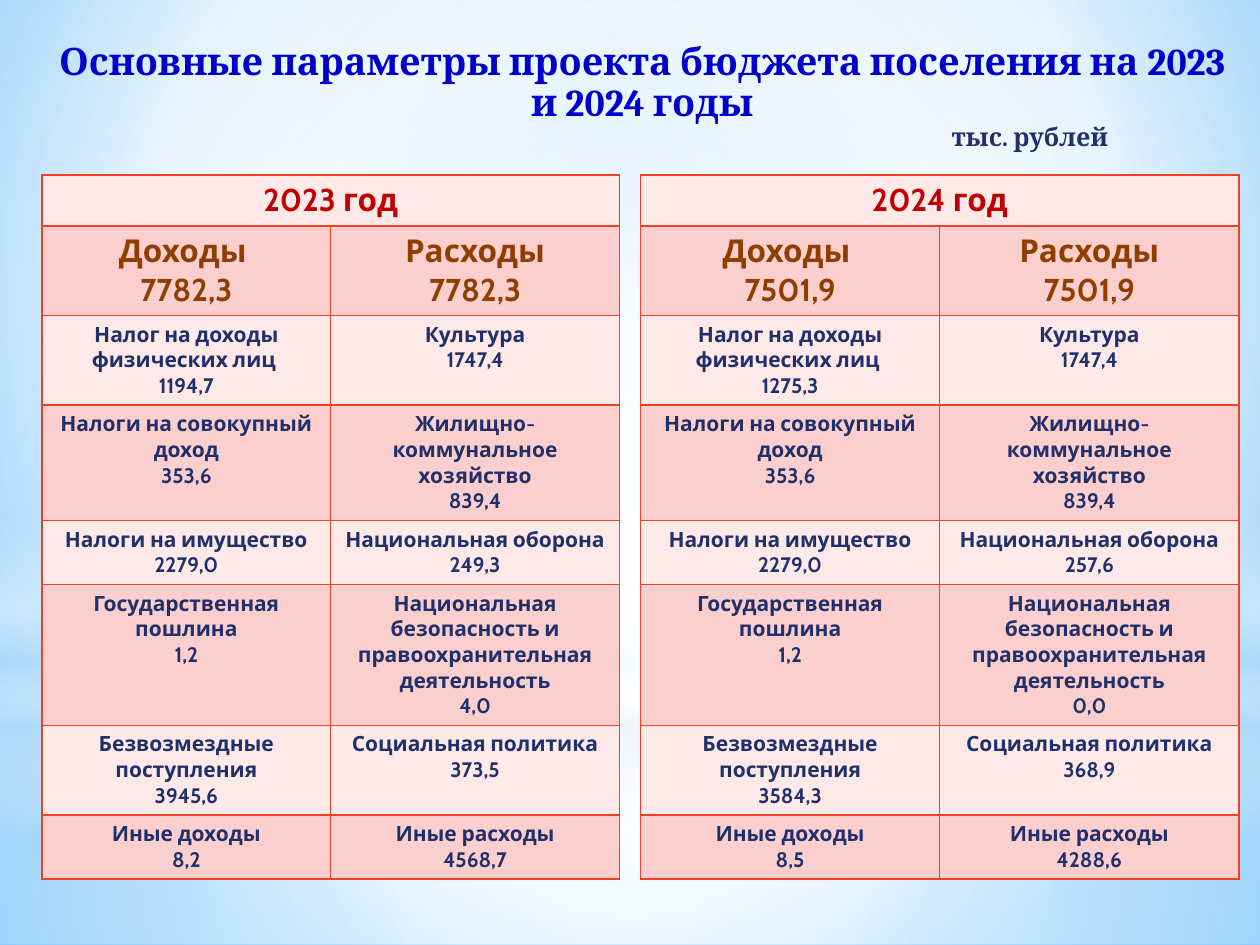
from lxml.etree import SubElement
from pptx import Presentation
from pptx.dml.color import RGBColor
from pptx.enum.shapes import MSO_SHAPE
from pptx.enum.text import MSO_ANCHOR, MSO_AUTO_SIZE, PP_ALIGN
from pptx.oxml import parse_xml
from pptx.oxml.ns import nsdecls, qn
from pptx.util import Pt

TITLE = "Основные параметры проекта бюджета поселения на 2023 и 2024 годы"
UNIT = "тыс. рублей"
INCOME = ["Доходы ", "Налог на доходы физических лиц ", "Налоги на совокупный доход",
          "Налоги на имущество", "Государственная пошлина",
          "Безвозмездные поступления", "Иные доходы"]
SPENDING = ["Расходы", "Культура", "Жилищно-коммунальное хозяйство",
            "Национальная оборона",
            "Национальная безопасность и правоохранительная деятельность",
            "Социальная политика", "Иные расходы"]
BUDGETS = [
    {"year": "2023 год", "left": 24, "width": 330,
     "income": ["7782,3", "1194,7", "353,6", "2279,0", "1,2", "3945,6", "8,2"],
     "spending": ["7782,3", "1747,4", "839,4", "249,3", "4,0", "373,5", "4568,7"]},
    {"year": "2024 год", "left": 366, "width": 342,
     "income": ["7501,9", "1275,3", "353,6", "2279,0", "1,2", "3584,3", "8,5"],
     "spending": ["7501,9", "1747,4", "839,4", "257,6", "0,0", "368,9", "4288,6"]},
]
TABLE_TOP = 100
ROW_HEIGHTS = [29, 51, 51, 65, 36, 80, 51, 36]
ROW_FILLS = ["FCE9E8", "FACFCD"]
BORDER = "F14124"

YEAR_FONT = {"name": "Cabin", "size": 18, "bold": True, "color": "C00000"}
TOTAL_FONT = {**YEAR_FONT, "color": "903E00"}
ITEM_FONT = {**YEAR_FONT, "size": 12, "color": "21306A"}
TITLE_FONT = {"name": "Cambria", "size": 21.6, "bold": True, "color": "0000CC"}
UNIT_FONT = {**TITLE_FONT, "size": 14.4, "color": "21306A"}

# Gradient stops: position, colour, opacity (all in percent)
PAGE_STOPS = [(0, "9ED5FF", 100), (60, "FFFFFF", 100), (100, "5BB9FF", 100)]
CENTRE = (50, 50, 50, 50)
BACKDROP = [
    (MSO_SHAPE.RECTANGLE, 402, 138, CENTRE,
     [(0, "FFFFFF", 91), (37, "FFFFFF", 76), (100, "B4DCFA", 79)]),
    (MSO_SHAPE.RECTANGLE, 0, 402, CENTRE,
     [(0, "FFFFFF", 89), (48, "FFFFFF", 62), (100, "B4DCFA", 79)]),
    (MSO_SHAPE.RECTANGLE, 297, 180, None,
     [(0, "FFFFFF", 0), (29, "FFFFFF", 30), (45, "B4DCFA", 40),
      (55, "FFFFFF", 26), (65, "B4DCFA", 60), (100, "FFFFFF", 0)]),
    (MSO_SHAPE.OVAL, 126, 402, CENTRE, [(0, "FFFFFF", 100), (56, "FFFFFF", 0)]),
]


def color(value):
    return RGBColor.from_string(value)


def set_gradient(properties, stops, focus):
    """Replace a solid fill by a circular gradient, or a vertical one without focus."""
    gradient = parse_xml(f'<a:gradFill {nsdecls("a")} rotWithShape="1"/>')
    stop_list = SubElement(gradient, qn("a:gsLst"))
    for position, value, opacity in stops:
        stop = SubElement(stop_list, qn("a:gs"), pos=str(position * 1000))
        tint = SubElement(stop, qn("a:srgbClr"), val=value)
        if opacity < 100:
            SubElement(tint, qn("a:alpha"), val=str(opacity * 1000))
    if focus:
        circle = SubElement(gradient, qn("a:path"), path="circle")
        sides = {side: str(part * 1000) for side, part in zip("ltrb", focus)}
        SubElement(circle, qn("a:fillToRect"), **sides)
    else:
        SubElement(gradient, qn("a:lin"), ang="5400000", scaled="0")
    properties.replace(properties.find(qn("a:solidFill")), gradient)


def write(para, text, style):
    para.alignment = PP_ALIGN.CENTER
    span = para.add_run()
    span.text = text
    for key, value in style.items():
        if key == "color":
            span.font.color.rgb = color(value)
        else:
            setattr(span.font, key, Pt(value) if key == "size" else value)


def fill_cell(cell, lines, style, fill):
    cell.fill.solid()
    cell.fill.fore_color.rgb = color(fill)
    properties = cell._tc.get_or_add_tcPr()
    for index, side in enumerate(("lnL", "lnR", "lnT", "lnB")):
        properties.insert(index, parse_xml(
            f'<a:{side} {nsdecls("a")} w="{Pt(1)}"><a:solidFill>'
            f'<a:srgbClr val="{BORDER}"/></a:solidFill></a:{side}>'))
    frame = cell.text_frame
    for index, line in enumerate(lines):
        write(frame.add_paragraph() if index else frame.paragraphs[0], line, style)


def add_backdrop(page, width):
    page.background.fill.solid()
    page.background.fill.fore_color.rgb = color("FFFFFF")
    set_gradient(page.element.find(".//" + qn("p:bgPr")), PAGE_STOPS, (20, 10, 20, 60))
    for kind, top, height, focus, stops in BACKDROP:
        shape = page.shapes.add_shape(kind, 0, Pt(top), width, Pt(height))
        shape.shadow.inherit = False
        shape.line.fill.background()
        shape.fill.solid()
        set_gradient(shape.element.spPr, stops, focus)


def add_title(page):
    title = page.shapes.title
    page.shapes.element.append(title.element)  # in front of the backdrop
    title.left, title.top, title.width, title.height = Pt(25), Pt(21), Pt(684), Pt(45)
    frame = title.text_frame
    frame.word_wrap = True
    frame.auto_size = MSO_AUTO_SIZE.NONE
    frame.vertical_anchor = MSO_ANCHOR.TOP
    write(frame.paragraphs[0], TITLE, TITLE_FONT)
    write(frame.add_paragraph(), UNIT, UNIT_FONT)
    for para in frame.paragraphs:
        para.line_spacing = 0.9
        para.space_before = Pt(0)
    frame.paragraphs[1]._p.get_or_add_pPr().set("marL", str(Pt(443)))


def add_budget(page, budget):
    table = page.shapes.add_table(
        len(ROW_HEIGHTS), 2, Pt(budget["left"]), Pt(TABLE_TOP),
        Pt(budget["width"]), Pt(sum(ROW_HEIGHTS))).table
    table.first_row = table.horz_banding = False
    for row, height in zip(table.rows, ROW_HEIGHTS):
        row.height = Pt(height)
    table.cell(0, 0).merge(table.cell(0, 1))
    fill_cell(table.cell(0, 0), [budget["year"]], YEAR_FONT, ROW_FILLS[0])
    fill_cell(table.cell(0, 1), [], YEAR_FONT, ROW_FILLS[0])
    columns = [(INCOME, budget["income"]), (SPENDING, budget["spending"])]
    for column, (names, amounts) in enumerate(columns):
        for row, lines in enumerate(zip(names, amounts), start=1):
            fill_cell(table.cell(row, column), lines,
                      TOTAL_FONT if row == 1 else ITEM_FONT, ROW_FILLS[row % 2])


def main():
    deck = Presentation()
    deck.slide_width, deck.slide_height = Pt(720), Pt(540)
    page = deck.slides.add_slide(deck.slide_layouts[5])
    add_backdrop(page, deck.slide_width)
    add_title(page)
    for budget in BUDGETS:
        add_budget(page, budget)
    deck.save("out.pptx")


if __name__ == "__main__":
    main()
